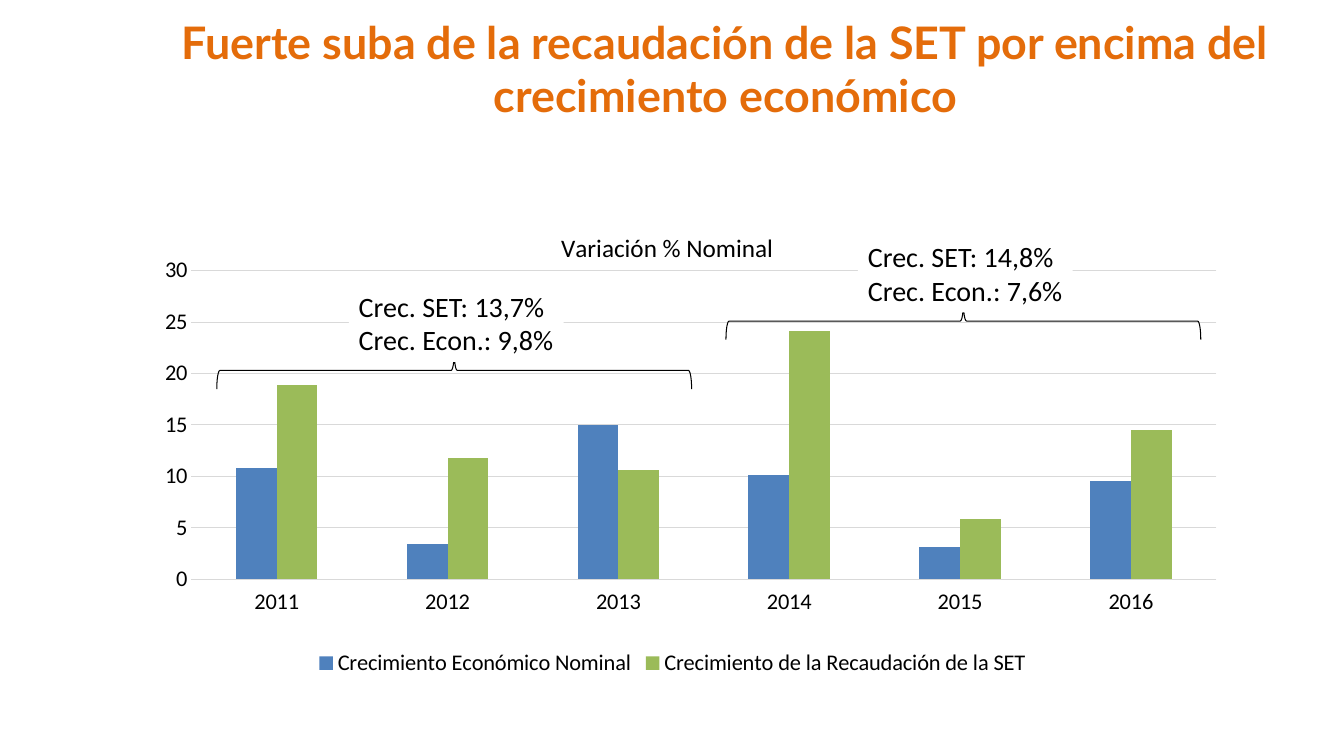
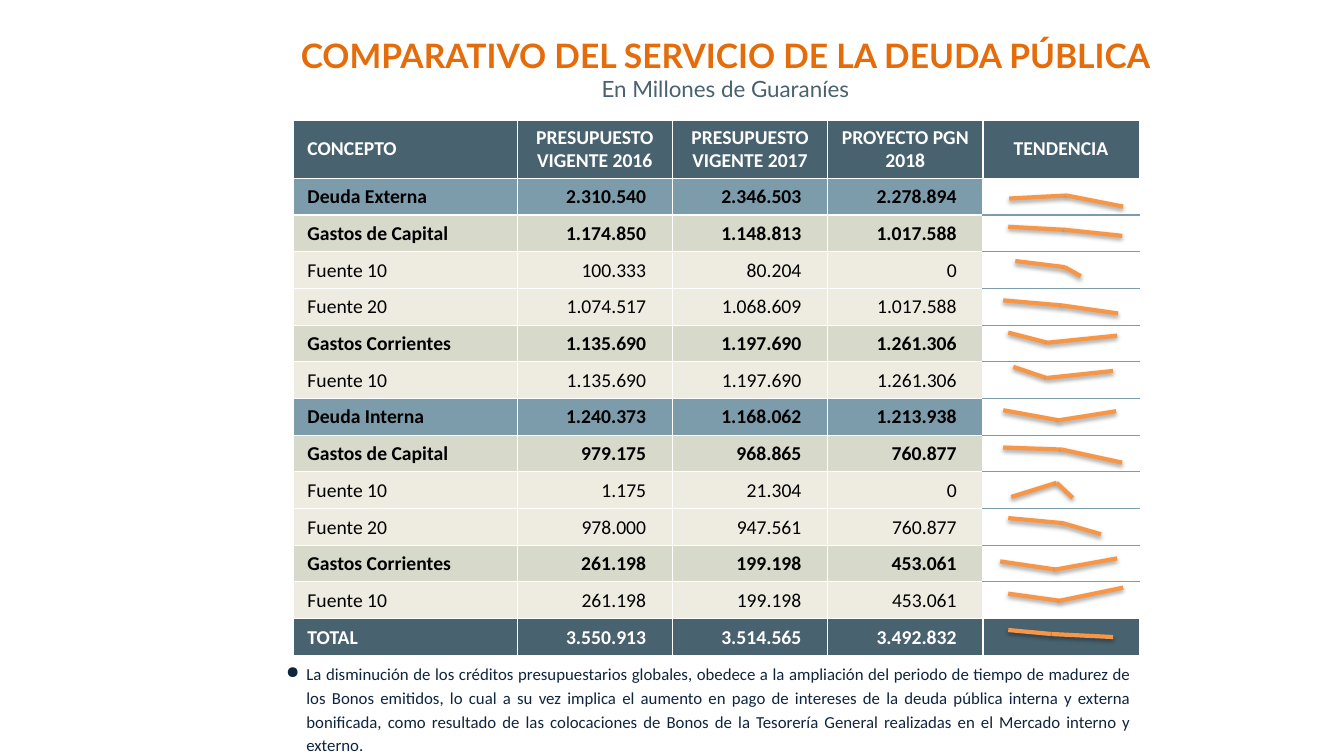
"""Builds two slides on tax revenue growth and public debt service."""
from typing import NamedTuple

from lxml.etree import SubElement
from pptx import Presentation
from pptx.chart.data import CategoryChartData
from pptx.dml.color import RGBColor
from pptx.enum.chart import XL_CHART_TYPE as ChartType
from pptx.enum.chart import XL_LEGEND_POSITION as LegendPosition
from pptx.enum.chart import XL_TICK_LABEL_POSITION as LabelPosition
from pptx.enum.chart import XL_TICK_MARK as TickMark
from pptx.enum.shapes import MSO_CONNECTOR as Connector
from pptx.enum.shapes import MSO_SHAPE as Shape
from pptx.enum.text import MSO_ANCHOR as Anchor
from pptx.enum.text import PP_ALIGN as Align
from pptx.oxml.ns import qn
from pptx.util import Inches, Pt

TITLE_FONT, BODY_FONT = "Lato", "Calibri"
BLACK, WHITE, ORANGE, NAVY = "000000", "FFFFFF", "E46C0A", "0F243E"
SLATE, STEEL, SAGE, CREAM = "48626F", "7D9CAB", "D7D9CB", "EEECE1"
GRID, TREND = "D9D9D9", "F79646"
Point = tuple[float, float]


class Style(NamedTuple):
    size: float
    colour: str = BLACK
    bold: bool = False
    font: str = BODY_FONT


class Period(NamedTuple):
    left: float
    top: float
    lines: tuple[str, str]


class Level(NamedTuple):
    fill: str
    style: Style


class DebtRow(NamedTuple):
    level: Level
    concept: str
    amounts: tuple[str, str, str]
    trend: tuple[Point, Point, Point]


HEADER = Level(SLATE, Style(14, WHITE, True))
DEBT = Level(STEEL, Style(14, bold=True))
GROUP = Level(SAGE, Style(14, bold=True))
SOURCE = Level(CREAM, Style(14))

YEARS = ("2011", "2012", "2013", "2014", "2015", "2016")
SERIES = (
    ("Crecimiento Económico Nominal", "4F81BD", (10.8, 3.4, 15, 10.1, 3.1, 9.5)),
    ("Crecimiento de la Recaudación de la SET", "9BBB59", (18.9, 11.8, 10.6, 24.1, 5.8, 14.5)),
)
PERIODS = (
    Period(7.2, 3.0, ("Crec. SET: 14,8%", "Crec. Econ.: 7,6%")),
    Period(2.15, 3.49, ("Crec. SET: 13,7%", "Crec. Econ.: 9,8%")),
)
HEADINGS = ("CONCEPTO", "PRESUPUESTO VIGENTE 2016", "PRESUPUESTO VIGENTE 2017",
            "PROYECTO PGN 2018", "TENDENCIA")
COLUMN_WIDTHS = (2.22, 1.54, 1.54, 1.54, 1.55)
TABLE_HEIGHT, HEADER_HEIGHT = 5.31, 0.58
DEBT_ROWS = (
    DebtRow(DEBT, "Deuda Externa", ("2.310.540", "2.346.503", "2.278.894"),
            ((10.01, 1.97), (10.58, 1.94), (11.14, 2.05))),
    DebtRow(GROUP, "Gastos de Capital", ("1.174.850", "1.148.813", "1.017.588"),
            ((10, 2.25), (10.56, 2.28), (11.13, 2.34))),
    DebtRow(SOURCE, "Fuente 10", ("100.333", "80.204", "0"),
            ((10.07, 2.59), (10.56, 2.65), (10.72, 2.74))),
    DebtRow(SOURCE, "Fuente 20", ("1.074.517", "1.068.609", "1.017.588"),
            ((9.95, 2.98), (10.53, 3.03), (11.09, 3.11))),
    DebtRow(GROUP, "Gastos Corrientes", ("1.135.690", "1.197.690", "1.261.306"),
            ((10, 3.3), (10.39, 3.4), (11.08, 3.33))),
    DebtRow(SOURCE, "Fuente 10", ("1.135.690", "1.197.690", "1.261.306"),
            ((10.05, 3.64), (10.38, 3.75), (11.04, 3.68))),
    DebtRow(DEBT, "Deuda Interna", ("1.240.373", "1.168.062", "1.213.938"),
            ((9.95, 4.07), (10.5, 4.17), (11.07, 4.08))),
    DebtRow(GROUP, "Gastos de Capital", ("979.175", "968.865", "760.877"),
            ((9.95, 4.44), (10.53, 4.46), (11.13, 4.59))),
    DebtRow(SOURCE, "Fuente 10", ("1.175", "21.304", "0"),
            ((10.03, 4.93), (10.48, 4.79), (10.64, 4.94))),
    DebtRow(SOURCE, "Fuente 20", ("978.000", "947.561", "760.877"),
            ((10, 5.14), (10.54, 5.19), (10.92, 5.3))),
    DebtRow(GROUP, "Gastos Corrientes", ("261.198", "199.198", "453.061"),
            ((9.92, 5.57), (10.47, 5.65), (11.08, 5.54))),
    DebtRow(SOURCE, "Fuente 10", ("261.198", "199.198", "453.061"),
            ((10, 5.89), (10.51, 5.96), (11.14, 5.83))),
    DebtRow(HEADER, "TOTAL", ("3.550.913", "3.514.565", "3.492.832"),
            ((10, 6.25), (10.43, 6.29), (11.04, 6.32))),
)
NOTE = (
    "La disminución de los créditos presupuestarios globales, obedece a la ampliación del "
    "periodo de tiempo de madurez de los Bonos emitidos, lo cual a su vez implica el aumento "
    "en pago de intereses de la deuda pública interna y externa bonificada, como resultado de "
    "las colocaciones de Bonos de la Tesorería General realizadas en el Mercado interno y externo."
)


def rgb(colour: str) -> RGBColor:
    return RGBColor.from_string(colour)


def set_fill(fill, colour: str) -> None:
    fill.solid()
    fill.fore_color.rgb = rgb(colour)


def set_line(line, colour: str, width: float) -> None:
    set_fill(line.fill, colour)
    line.width = Pt(width)


def set_font(font, style: Style) -> None:
    font.name, font.size, font.bold = style.font, Pt(style.size), style.bold
    font.color.rgb = rgb(style.colour)


def add_span(para, text: str, style: Style) -> None:
    span = para.add_run()
    span.text = text
    set_font(span.font, style)


def add_box(page, left: float, top: float, width: float, height: float):
    box = page.shapes.add_textbox(Inches(left), Inches(top), Inches(width), Inches(height))
    box.text_frame.word_wrap = True
    return box


def add_title(page, title: str, size: float, subtitle: str = "") -> None:
    frame = add_box(page, 1.42, 0.36, 11.55, 0.63).text_frame
    frame.vertical_anchor = Anchor.MIDDLE
    para = frame.paragraphs[0]
    para.alignment = Align.CENTER
    add_span(para, title, Style(size, ORANGE, True, TITLE_FONT))
    if subtitle:
        para.add_line_break()
        add_span(para, subtitle, Style(16, SLATE, font=TITLE_FONT))


def place_chart_part(part, index: int, **values: str | float) -> None:
    layout = part.find(qn("c:layout"))
    if layout is None:
        layout = part.makeelement(qn("c:layout"))
        part.insert(index, layout)
    manual = SubElement(layout, qn("c:manualLayout"))
    for name, value in values.items():
        SubElement(manual, qn(f"c:{name}")).set("val", str(value))


def add_growth_chart(page) -> None:
    data = CategoryChartData(number_format="0.0")
    data.categories = YEARS
    for name, _, values in SERIES:
        data.add_series(name, values)
    chart = page.shapes.add_chart(ChartType.COLUMN_CLUSTERED, Inches(0.92), Inches(2),
                                  Inches(11.5), Inches(4.76), data).chart
    set_font(chart.font, Style(16))
    chart.has_title = True
    add_span(chart.chart_title.text_frame.paragraphs[0], "Variación % Nominal", Style(18))
    place_chart_part(chart.chart_title._element, 1, xMode="edge", yMode="edge", x=0.4, y=0.05)
    place_chart_part(chart._chartSpace.chart.plotArea, 0, layoutTarget="inner", xMode="edge",
                     yMode="edge", x=0.085, y=0.144, w=0.884, h=0.643)
    chart.has_legend = True
    chart.legend.position = LegendPosition.BOTTOM
    chart.legend.include_in_layout = False
    set_font(chart.legend.font, Style(16))

    plot = chart.plots[0]
    plot.gap_width, plot.overlap, plot.vary_by_categories = 219, 0, False
    for series, (_, colour, _) in zip(plot.series, SERIES):
        set_fill(series.format.fill, colour)

    for axis in (chart.category_axis, chart.value_axis):
        axis.major_tick_mark = axis.minor_tick_mark = TickMark.NONE
        set_font(axis.tick_labels.font, Style(16))
    chart.category_axis.tick_label_position = LabelPosition.LOW
    set_line(chart.category_axis.format.line, GRID, 0.75)
    scale = chart.value_axis
    scale.minimum_scale, scale.maximum_scale, scale.major_unit = 0, 30, 5
    scale.tick_labels.number_format = "0"
    scale.tick_labels.number_format_is_linked = False
    scale.format.line.fill.background()
    set_line(scale.major_gridlines.format.line, GRID, 0.75)


def add_period(page, period: Period) -> None:
    span, depth = 4.71, 0.37
    brace = page.shapes.add_shape(
        Shape.RIGHT_BRACE, Inches(period.left + (span - depth) / 2),
        Inches(period.top + (depth - span) / 2), Inches(depth), Inches(span))
    brace.rotation = 270
    brace.shadow.inherit = False
    brace.fill.background()
    set_line(brace.line, BLACK, 0.75)
    box = add_box(page, period.left + 1.31, period.top - 0.67, 2.13, 0.77)
    set_fill(box.fill, WHITE)
    frame = box.text_frame
    for para, text in zip((frame.paragraphs[0], frame.add_paragraph()), period.lines):
        add_span(para, text, Style(20))


def set_borders(cell, top: str, bottom: str) -> None:
    properties = cell._tc.get_or_add_tcPr()
    for side, colour in (("L", WHITE), ("R", WHITE), ("T", top), ("B", bottom)):
        border = SubElement(properties, qn(f"a:ln{side}"), w=str(Pt(1)))
        SubElement(SubElement(border, qn("a:solidFill")), qn("a:srgbClr"), val=colour)


def fill_cell(cell, text: str, level: Level, align: Align, margins: tuple[float, ...]) -> None:
    cell.margin_left, cell.margin_top, cell.margin_right, cell.margin_bottom = map(Inches, margins)
    cell.vertical_anchor = Anchor.MIDDLE
    set_fill(cell.fill, level.fill)
    para = cell.text_frame.paragraphs[0]
    para.alignment = align
    if text:
        add_span(para, text, level.style)


def add_debt_table(page) -> None:
    table = page.shapes.add_table(
        len(DEBT_ROWS) + 1, len(HEADINGS), Inches(2.91), Inches(1.19),
        Inches(sum(COLUMN_WIDTHS)), Inches(TABLE_HEIGHT)).table
    table.horz_banding = False
    for column, width in zip(table.columns, COLUMN_WIDTHS):
        column.width = Inches(width)
    for row in table.rows:
        row.height = Inches((TABLE_HEIGHT - HEADER_HEIGHT) / len(DEBT_ROWS))
    table.rows[0].height = Inches(HEADER_HEIGHT)

    for index, heading in enumerate(HEADINGS):
        cell = table.cell(0, index)
        set_borders(cell, WHITE, WHITE)
        fill_cell(cell, heading, HEADER, Align.CENTER if index else Align.LEFT,
                  (0.02 if index else 0.14, 0.04, 0.02, 0.04))

    last = len(DEBT_ROWS)
    for number, debt in enumerate(DEBT_ROWS, 1):
        for index, text in enumerate((debt.concept, *debt.amounts, "")):
            cell = table.cell(number, index)
            is_trend = index == len(HEADINGS) - 1
            set_borders(cell, STEEL if is_trend and 1 < number < last else WHITE,
                        STEEL if is_trend and number < last - 1 else WHITE)
            fill_cell(cell, text, debt.level, Align.RIGHT if index else Align.LEFT,
                      (0.01, 0.01, 0.26, 0) if index else (0.14, 0.01, 0.01, 0))
            if is_trend and number < last:
                cell.fill.background()


def add_trend(page, points: tuple[Point, ...]) -> None:
    for start, end in zip(points, points[1:]):
        line = page.shapes.add_connector(Connector.STRAIGHT, *map(Inches, start + end))
        set_line(line.line, TREND, 3)
        effects = SubElement(line._element.spPr, qn("a:effectLst"))
        shadow = SubElement(effects, qn("a:outerShdw"), blurRad=str(Pt(3.1)),
                            dist=str(Pt(1.8)), dir="5400000", rotWithShape="0")
        tint = SubElement(shadow, qn("a:srgbClr"), val=BLACK)
        SubElement(tint, qn("a:alpha"), val="35000")


def add_note(page) -> None:
    para = add_box(page, 2.74, 6.5, 8.58, 1).text_frame.paragraphs[0]
    para.alignment = Align.JUSTIFY
    para.line_spacing, para.space_after = Pt(17), Pt(10)
    properties = para._p.get_or_add_pPr()
    properties.set("marL", str(Inches(0.2)))
    properties.set("indent", str(Inches(-0.2)))
    SubElement(properties, qn("a:buChar"), char="●")
    add_span(para, NOTE, Style(12, NAVY))


def main() -> None:
    deck = Presentation()
    deck.slide_width, deck.slide_height = Inches(13.33), Inches(7.5)
    blank = deck.slide_layouts[6]

    page = deck.slides.add_slide(blank)
    add_growth_chart(page)
    add_title(page, "Fuerte suba de la recaudación de la SET por encima del crecimiento económico", 32)
    for period in PERIODS:
        add_period(page, period)

    page = deck.slides.add_slide(blank)
    add_title(page, "COMPARATIVO DEL SERVICIO DE LA DEUDA PÚBLICA", 24, "En Millones de Guaraníes")
    add_debt_table(page)
    for debt in DEBT_ROWS:
        add_trend(page, debt.trend)
    add_note(page)
    deck.save("out.pptx")


if __name__ == "__main__":
    main()
